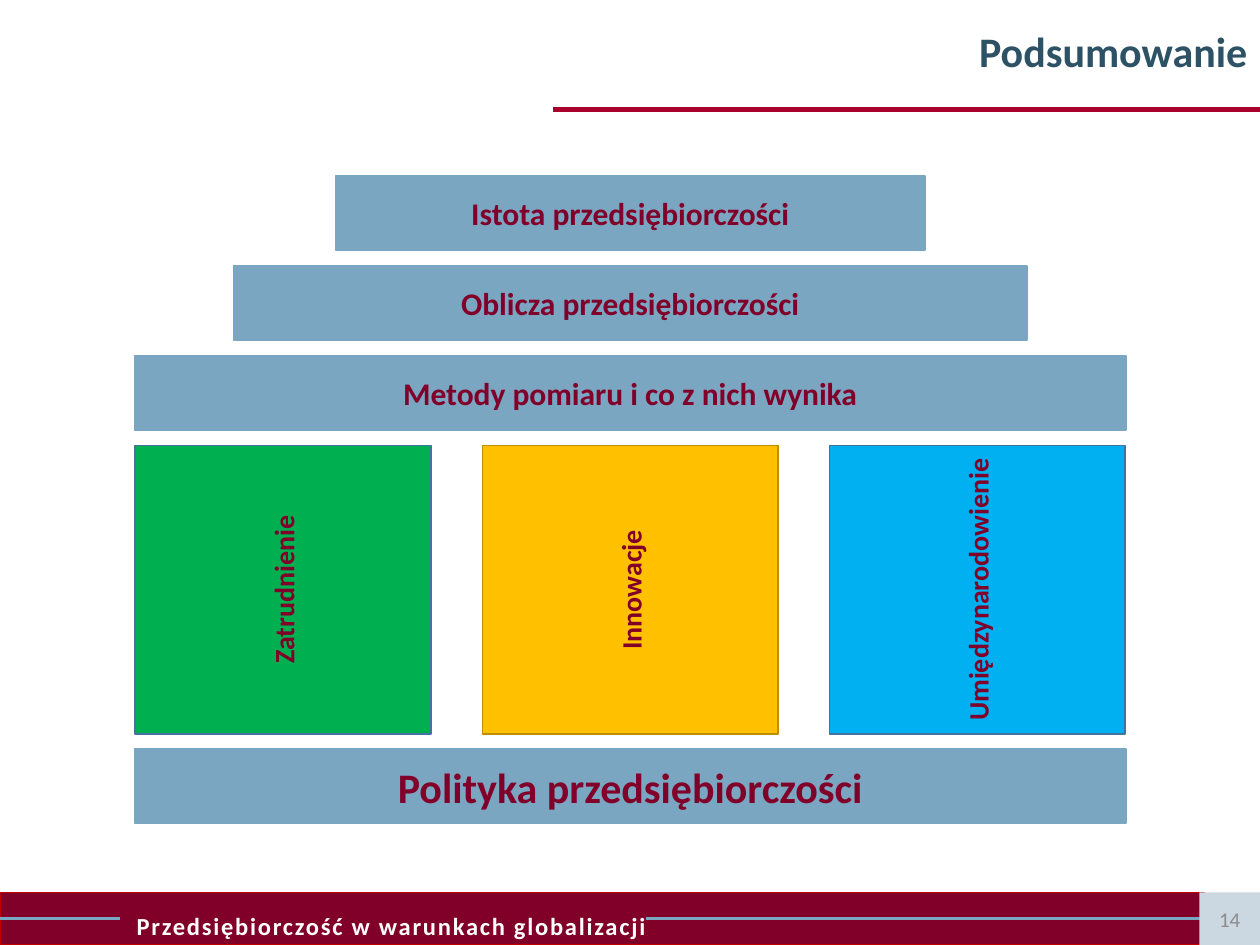
from lxml.etree import SubElement
from pptx import Presentation
from pptx.dml.color import RGBColor
from pptx.enum.shapes import MSO_CONNECTOR, MSO_SHAPE
from pptx.enum.text import MSO_ANCHOR, MSO_AUTO_SIZE, PP_ALIGN
from pptx.oxml.ns import qn
from pptx.util import Pt

FONT = "Calibri"
MAROON, CRIMSON, STEEL, WHITE = "810029", "A7002B", "7AA6C2", "FFFFFF"

TITLE = "Podsumowanie"
FOOTER = "Przedsiębiorczość w warunkach globalizacji"
PAGE_NUMBER = "14"

# text, width, row, text size
BARS = [
    ("Istota przedsiębiorczości", 337, 0, 18),
    ("Oblicza przedsiębiorczości", 453.6, 1, 18),
    ("Metody pomiaru i co z nich wynika", 566.6, 2, 18),
    ("Polityka przedsiębiorczości", 566.6, 6.37, 24),
]
# text, fill, outline
PILLARS = [
    ("Zatrudnienie", "00B050", "43739E"),
    ("Innowacje", "FFC000", "BD8E00"),
    ("Umiędzynarodowienie", "00B0F0", "43739E"),
]
# left, right, height on the page, colour, width
RULES = [
    (316, 720, 62.5, CRIMSON, 3),
    (369.3, 687.6, 525, STEEL, 1.75),
    (0, 68.4, 525, STEEL, 1.75),
]

CENTER = 360.2
BAR_TOP, BAR_HEIGHT, ROW_STEP = 100.6, 42.5, 51.4
PILLAR_WIDTH, PILLAR_HEIGHT, PILLAR_STEP, PILLAR_MIDDLE = 169, 165, 198.4, 337


def color(hex_code):
    return RGBColor.from_string(hex_code)


def write(shape, text, size, hex_code, bold=True, align=PP_ALIGN.CENTER):
    frame = shape.text_frame
    frame.vertical_anchor = MSO_ANCHOR.MIDDLE
    para = frame.paragraphs[0]
    para.text = text
    para.alignment = align
    para.font.name = FONT
    para.font.size = Pt(size)
    para.font.bold = bold
    para.font.color.rgb = color(hex_code)
    return para


def add_box(left, top, width, height, fill, outline=None, line_width=1):
    box = page.shapes.add_shape(
        MSO_SHAPE.RECTANGLE, Pt(left), Pt(top), Pt(width), Pt(height))
    box.shadow.inherit = False
    box.fill.solid()
    box.fill.fore_color.rgb = color(fill)
    if outline:
        box.line.color.rgb = color(outline)
        box.line.width = Pt(line_width)
    else:
        box.line.fill.background()
    return box


def add_rule(left, right, height, hex_code, width):
    rule = page.shapes.add_connector(
        MSO_CONNECTOR.STRAIGHT, Pt(left), Pt(height), Pt(right), Pt(height))
    rule.line.color.rgb = color(hex_code)
    rule.line.width = Pt(width)
    SubElement(rule._element.spPr, qn("a:effectLst"))


deck = Presentation()
deck.slide_width, deck.slide_height = Pt(720), Pt(540)
page = deck.slides.add_slide(deck.slide_layouts[5])

title = page.shapes.title
title.left, title.top, title.width, title.height = Pt(0), Pt(0), Pt(720), Pt(62)
title.text_frame.auto_size = MSO_AUTO_SIZE.NONE
write(title, TITLE, 24, "2D5265", align=PP_ALIGN.RIGHT).line_spacing = 0.9

footer = add_box(0, 510, 688, 30, MAROON, "C00000", 0.75)
para = write(footer, FOOTER, 14, WHITE, align=PP_ALIGN.LEFT)
para.line_spacing = 1.5
para._p.pPr.set("marL", str(Pt(92)))
para._p.pPr.set("indent", str(Pt(-21)))
para.runs[0]._r.get_or_add_rPr().set("spc", "100")

for rule in RULES:
    add_rule(*rule)

number_box = add_box(685.4, 510, 34.6, 30, "CBD8E1")
write(number_box, PAGE_NUMBER, 12, "8C8C8C", bold=False)

for text, width, row, size in BARS:
    bar = add_box(CENTER - width / 2, BAR_TOP + row * ROW_STEP,
                  width, BAR_HEIGHT, STEEL, STEEL)
    write(bar, text, size, MAROON)

# Pillars are turned a quarter, so their width and height trade places.
for index, (text, fill, outline) in enumerate(PILLARS):
    middle = CENTER + (index - 1) * PILLAR_STEP
    pillar = add_box(middle - PILLAR_HEIGHT / 2, PILLAR_MIDDLE - PILLAR_WIDTH / 2,
                     PILLAR_HEIGHT, PILLAR_WIDTH, fill, outline)
    pillar.rotation = 270
    write(pillar, text, 16, MAROON)

deck.save("out.pptx")
